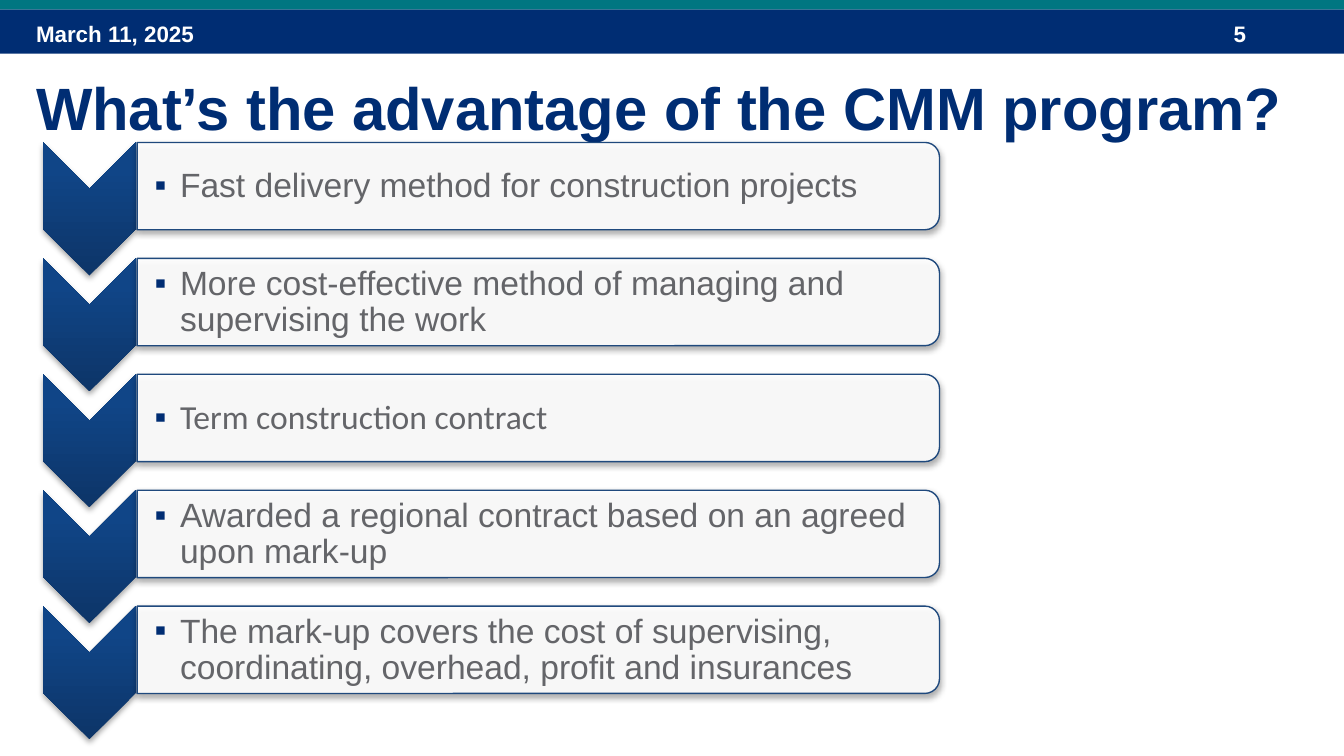
from lxml import etree
from pptx import Presentation
from pptx.dml.color import RGBColor as RGB
from pptx.enum.shapes import MSO_SHAPE as SHAPE
from pptx.enum.text import MSO_ANCHOR as ANCHOR
from pptx.oxml import parse_xml
from pptx.oxml.ns import nsdecls, qn
from pptx.util import Inches, Pt

COLORS = {"navy": "002D73", "teal": "007681", "white": "FFFFFF", "gray": "646569",
          "edge": "1F497D", "deep": "0D3568", "mid": "104587", "top": "0E458A"}
ITEMS = [
    ("Fast delivery method for construction projects", "Arial"),
    ("More cost-effective method of managing and supervising the work", "Arial"),
    ("Term construction contract", "Calibri"),
    ("Awarded a regional contract based on an agreed upon mark-up", "Arial"),
    ("The mark-up covers the cost of supervising, coordinating, overhead, "
     "profit and insurances", "Arial"),
]


def rgb(name):
    """Return the named colour."""
    return RGB.from_string(COLORS[name])


def add_bar(slide, box, color):
    """Draw a plain filled bar."""
    bar = slide.shapes.add_shape(SHAPE.RECTANGLE, *map(Inches, box))
    bar.shadow.inherit = False
    bar.fill.solid()
    bar.fill.fore_color.rgb = rgb(color)
    bar.line.fill.background()


def add_text(shapes, box, text, size, color, face="Arial", bold=False):
    """Add a one-paragraph text box and return its frame."""
    frame = shapes.add_textbox(*map(Inches, box)).text_frame
    frame.word_wrap = True
    frame.text = text
    font = frame.paragraphs[0].runs[0].font
    font.size, font.name, font.bold = Pt(size), face, bold
    font.color.rgb = rgb(color)
    return frame


def add_turned(shapes, kind, box):
    """Add a shape turned a quarter clockwise that fills the given box."""
    left, top, wide, high = box
    shift = (wide - high) / 2
    place = (left + shift, top - shift, high, wide)
    shape = shapes.add_shape(kind, *map(Inches, place))
    shape.rotation = 90
    return shape


def add_shadow(shape):
    """Give the shape a soft shadow below it."""
    shape.shadow.inherit = False
    effects = shape._element.spPr.find(qn("a:effectLst"))
    effects.append(parse_xml(
        f'<a:outerShdw {nsdecls("a")} blurRad="40000" dist="23000" dir="5400000" '
        'rotWithShape="0"><a:srgbClr val="000000"><a:alpha val="35000"/>'
        '</a:srgbClr></a:outerShdw>'))


def add_arrow(shapes, box):
    """Draw a downward chevron with a vertical gradient."""
    arrow = add_turned(shapes, SHAPE.CHEVRON, box)
    arrow.line.fill.background()
    stops = "".join(
        f'<a:gs pos="{pos}"><a:srgbClr val="{COLORS[name]}"/></a:gs>'
        for pos, name in ((0, "deep"), (80000, "mid"), (100000, "top")))
    grad = parse_xml(
        f'<a:gradFill {nsdecls("a")} rotWithShape="0"><a:gsLst>{stops}</a:gsLst>'
        '<a:lin ang="16200000" scaled="0"/></a:gradFill>')
    arrow._element.spPr.find(qn("a:prstGeom")).addnext(grad)
    add_shadow(arrow)


def add_card(shapes, box):
    """Draw a translucent white card with rounded right corners."""
    card = add_turned(shapes, SHAPE.ROUND_2_SAME_RECTANGLE, box)
    card.fill.solid()
    card.fill.fore_color.rgb = rgb("white")
    tint = card._element.spPr.find(qn("a:solidFill"))[0]
    etree.SubElement(tint, qn("a:alpha")).set("val", "90000")
    card.line.color.rgb = rgb("edge")
    card.line.width = Pt(0.75)
    add_shadow(card)


def add_bullet(para):
    """Give the paragraph a hanging square bullet."""
    props = para._p.get_or_add_pPr()
    props.set("marL", str(Inches(0.19)))
    props.set("indent", str(Inches(-0.19)))
    color = etree.SubElement(props, qn("a:buClr"))
    etree.SubElement(color, qn("a:srgbClr")).set("val", COLORS["navy"])
    etree.SubElement(props, qn("a:buFont")).set("typeface", "Arial")
    etree.SubElement(props, qn("a:buChar")).set("char", "▪")


def add_step(shapes, left, top, text, face):
    """Place one chevron, its card and its bullet."""
    add_arrow(shapes, (left, top, 0.69, 0.99))
    add_card(shapes, (left + 0.7, top, 5.97, 0.65))
    frame = add_text(shapes, (left + 0.69, top + 0.04, 5.94, 0.58),
                     text, 18, "gray", face)
    frame.vertical_anchor = ANCHOR.MIDDLE
    frame.margin_left = Inches(0.14)
    frame.margin_top = frame.margin_right = frame.margin_bottom = Inches(0.01)
    para = frame.paragraphs[0]
    add_bullet(para)
    para.level = 1
    para.line_spacing = 0.9


def add_list(slide, left, top, span):
    """Spread the steps evenly over the span in one group."""
    group = slide.shapes.add_group_shape()
    pitch = span / (len(ITEMS) - 1)
    for row, (text, face) in enumerate(ITEMS):
        add_step(group.shapes, left, top + row * pitch, text, face)


def add_header(slide, width):
    """Draw the header bars with the date and the page number."""
    add_bar(slide, (0, 0.07, width, 0.33), "navy")
    add_bar(slide, (0, -0.02, width, 0.09), "teal")
    add_text(slide.shapes, (0.17, 0.1, 2.33, 0.3), "March 11, 2025", 12, "white", bold=True)
    add_text(slide.shapes, (width - 0.92, 0.1, 0.75, 0.3), "5", 12, "white", bold=True)


def main():
    """Build and save the slide."""
    deck = Presentation()
    deck.slide_width, deck.slide_height = Inches(10), Inches(10 * 9 / 16)
    slide = deck.slides.add_slide(deck.slide_layouts[6])
    add_header(slide, 10)
    title = add_text(slide.shapes, (0.17, 0.48, 9.5, 0.64),
                     "What’s the advantage of the CMM program?", 32, "navy", bold=True)
    title.word_wrap = False
    add_list(slide, 0.32, 1.06, 3.45)
    deck.save("out.pptx")


if __name__ == "__main__":
    main()
